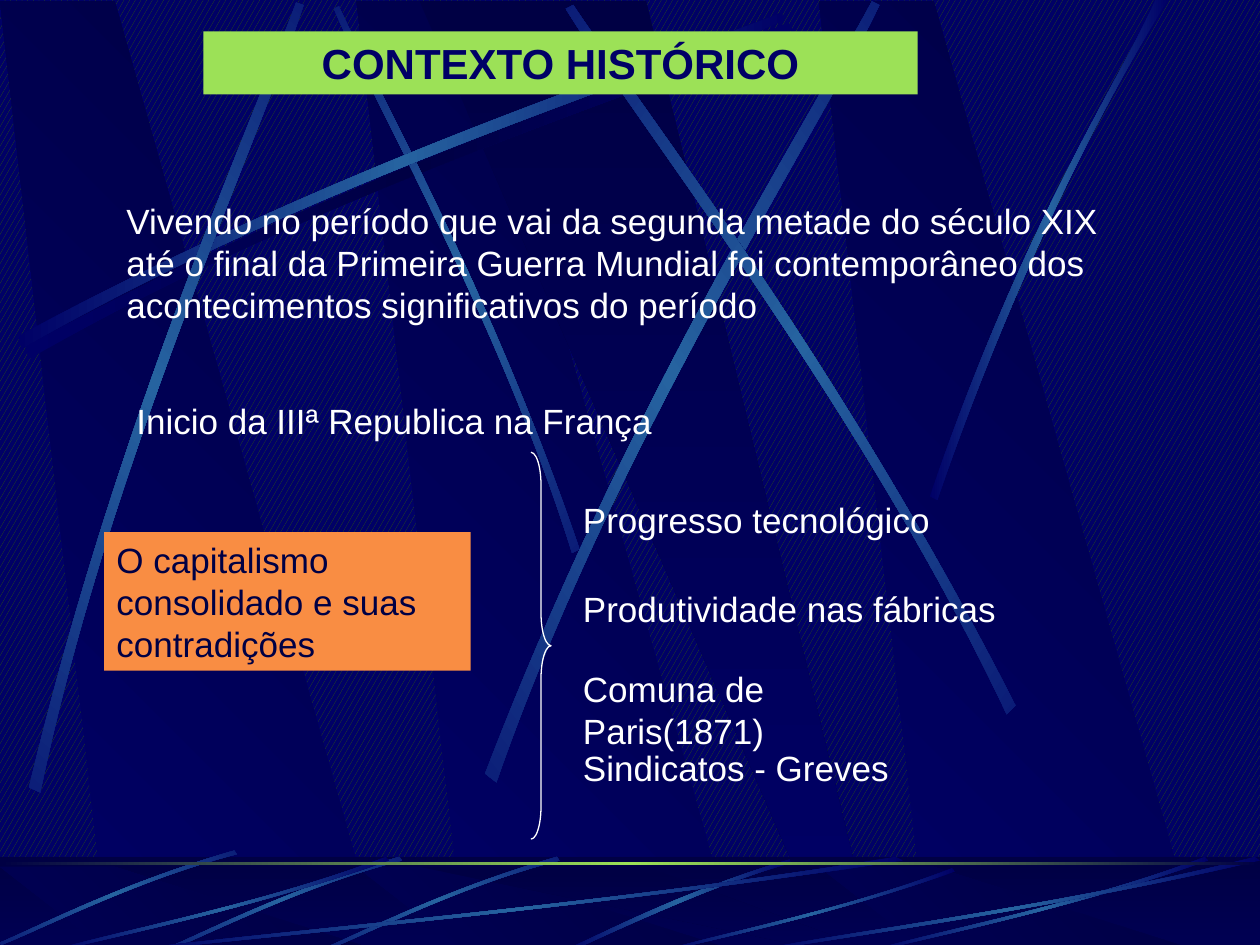
import math

from lxml import etree
from pptx import Presentation
from pptx import util as u
from pptx.dml import color
from pptx.enum import dml, shapes, text
from pptx.oxml import ns

NAVY, DARK, BLUE = "000066", "000044", "2663A0"
LIME, CORAL, WHITE = "9CE157", "F98D43", "FFFFFF"
GLOW = (NAVY, BLUE, NAVY)


def rgb(code):
    return color.RGBColor.from_string(code)


def shift(pts, dx, dy):
    return [(x + dx, y + dy) for x, y in pts]


def fit(pts, left, top, wide, high):
    return [(left + x * wide, top + y * high) for x, y in pts]


def turn(pts, angle):
    c, s = math.cos(math.radians(angle)), math.sin(math.radians(angle))
    return [(x * c - y * s, x * s + y * c) for x, y in pts]


def level(pts, angle):
    flat = turn(pts, -angle)
    mid = [(min(side) + max(side)) / 2 for side in zip(*flat)]
    spot = turn([mid], angle)[0]
    return shift(flat, spot[0] - mid[0], spot[1] - mid[1])


class Deck:
    cell = u.Inches(0.1)
    font = "Arial"
    size = 20

    def __init__(self, cols, rows):
        self.file = Presentation()
        self.file.slide_width = self.grid(cols)
        self.file.slide_height = self.grid(rows)
        self.page = self.file.slides.add_slide(self.file.slide_layouts[6])
        self.all = self.page.shapes

    def grid(self, n):
        return u.Emu(round(n * self.cell))

    def back(self, fore, base):
        fill = self.page.background.fill
        fill.patterned()
        fill.pattern = dml.MSO_PATTERN.LARGE_CONFETTI
        fill.fore_color.rgb = rgb(fore)
        fill.back_color.rgb = rgb(base)

    def plain(self, item):
        item.shadow.inherit = False
        item.line.fill.background()
        return item

    def blend(self, item, tones, angle):
        item.fill.gradient()
        grad = item._element.spPr.find(ns.qn("a:gradFill"))
        for kid in list(grad):
            grad.remove(kid)
        grad.set("rotWithShape", "1")
        stops = etree.SubElement(grad, ns.qn("a:gsLst"))
        for i, tone in enumerate(tones):
            spot = str(100000 * i // (len(tones) - 1))
            stop = etree.SubElement(stops, ns.qn("a:gs"), pos=spot)
            etree.SubElement(stop, ns.qn("a:srgbClr"), val=tone)
        etree.SubElement(grad, ns.qn("a:lin"), ang=str(angle * 60000), scaled="0")

    def shape(self, kind, *at):
        return self.plain(self.all.add_shape(kind, *map(self.grid, at)))

    def rect(self, *at):
        return self.shape(shapes.MSO_SHAPE.RECTANGLE, *at)

    def bar(self, at, tones, angle):
        self.blend(self.rect(*at), tones, angle)

    def veil(self, at, tone, alpha):
        item = self.rect(*at)
        item.fill.solid()
        item.fill.fore_color.rgb = rgb(tone)
        node = item._element.spPr.find(".//" + ns.qn("a:srgbClr"))
        etree.SubElement(node, ns.qn("a:alpha"), val=str(alpha * 1000))

    def poly(self, pts, tones, angle):
        spots = [(self.grid(x), self.grid(y)) for x, y in pts]
        pen = self.all.build_freeform(*spots[0])
        pen.add_line_segments(spots[1:], close=True)
        item = self.plain(pen.convert_to_shape())
        self.blend(item, tones, angle)
        return item

    def ray(self, pts, angle=0, tones=GLOW):
        item = self.poly(level(pts, angle), tones, 0)
        item.rotation = angle
        track = item._element.spPr.find(".//" + ns.qn("a:path"))
        steps = track.findall(ns.qn("a:lnTo"))
        for trio in (steps[:3], steps[4:]):
            bend = etree.Element(ns.qn("a:cubicBezTo"))
            trio[0].addprevious(bend)
            for step in trio:
                bend.append(step[0])
                track.remove(step)

    def panes(self, top, low):
        for x in (28.3, 0, 65):
            pts = [(x + 8.6, low), (x + 30.2, low), (x + 9.1, top), (x, top)]
            self.poly(pts, (NAVY, DARK), 315)
        pts = [(33.3, top), (65.8, low), (69.4, low), (51.3, top)]
        self.poly(pts, (DARK, NAVY), 90)

    def brace(self, at, tone, ratios):
        item = self.shape(shapes.MSO_SHAPE.RIGHT_BRACE, *at)
        item.fill.background()
        item.line.color.rgb = rgb(tone)
        item.line.width = u.Pt(0.75)
        for i, ratio in enumerate(ratios):
            item.adjustments[i] = ratio

    def words(self, at, line, tone=WHITE, fill=None, size=None, title=False):
        if fill:
            item = self.rect(*at)
            item.fill.solid()
            item.fill.fore_color.rgb = rgb(fill)
        else:
            item = self.all.add_textbox(*map(self.grid, at))
        frame = item.text_frame
        frame.word_wrap = True
        frame.auto_size = text.MSO_AUTO_SIZE.SHAPE_TO_FIT_TEXT
        frame.vertical_anchor = text.MSO_ANCHOR.TOP
        para = frame.paragraphs[0]
        para.text = line
        para.alignment = text.PP_ALIGN.CENTER if title else text.PP_ALIGN.LEFT
        para.font.name = self.font
        para.font.size = u.Pt(size or self.size)
        para.font.bold = title
        para.font.color.rgb = rgb(tone)


SWEEP = [(1.4, 26.7), (27.8, 12.5), (51.8, 5.1), (62, 1),
         (62.3, 1.6), (52.2, 6.1), (24.8, 14.3), (1.7, 27.7)]
BEAMS = [
    (311.7, [(2.3, 62.5), (9.3, 33.4), (19.7, 10.5), (23.5, 0.2),
             (24.1, 0.4), (20.7, 10.9), (8.6, 36.8), (3.2, 62.9)]),
    (321.6, [(38.5, 61.4), (49.8, 32), (63.8, 10.2), (69.2, 0.1),
             (69.8, 0.4), (64.9, 10.8), (48.6, 35.5), (39.4, 62.1)]),
    (34.7, [(80.6, 56), (67, 29.3), (51.6, 9.5), (45.5, 0.4),
            (44.9, 0.7), (50.7, 10.1), (68.5, 32.5), (79.9, 56.7)]),
    (0, [(73.8, 39.4), (81.4, 17.3), (88.8, 6.6), (91.7, 0),
         (92.7, 0), (83.6, 14.5), (76.9, 32.2), (74.4, 39.7)]),
]
SLANT = [(46, 43.6), (39.1, 23.4), (30.2, 7.7), (26.9, 0.5),
         (26.5, 0.7), (29.5, 7.9), (39.8, 25.8), (45.4, 43.9)]
ARC = [(62.7, 68.2), (53.7, 70.9), (47.7, 74.2), (44.8, 75.4),
       (45.3, 75.5), (49, 73.8), (57.1, 70), (62.8, 68.5)]
BLADE = [(44.2, 68), (35.5, 70.5), (28.7, 74), (25.6, 75.3),
         (25.7, 75.5), (28.8, 74.3), (36.5, 70.3), (44.4, 68.3)]
STREAK = [(1, 0.04), (0.57, 0.57), (0.17, 0.85), (0.01, 1),
          (0, 0.99), (0.16, 0.81), (0.62, 0.51), (0.99, 0)]
FLOOR = (0, 68, 100, 7.5)


def main():
    deck = Deck(100, 75)
    deck.back("2D5513", NAVY)
    deck.panes(0.1, 75.2)
    deck.ray(shift(SWEEP, 0.6, 0.8), tones=(NAVY, DARK, NAVY))
    deck.ray(SLANT, 45)
    deck.ray(SWEEP)
    for angle, pts in BEAMS:
        deck.ray(pts, angle)

    deck.bar(FLOOR, (DARK, NAVY), 90)
    deck.panes(68.8, 75.5)
    deck.veil(FLOOR, DARK, 50)
    deck.ray(ARC)
    for dx, dy in ((0, 0), (-12.5, 0), (-25.6, -0.5)):
        deck.ray(shift(BLADE, dx, dy), 315)
    for left, top, wide in ((10, 68, 61.7), (4.2, 68, 26.7), (52.7, 68.9, 23.1),
                            (69.2, 68, 26.7), (60, 68, 40)):
        deck.ray(fit(STREAK, left, top, wide, 75.5 - top))
    deck.bar((0, 68.4, 100, 0.23), (DARK, LIME, DARK), 0)

    deck.words((16.14, 2.5, 56.7, 5), "CONTEXTO HISTÓRICO", NAVY, LIME, 24, True)
    deck.words((9.04, 15.34, 79.5, 11),
               "Vivendo no período que vai da segunda metade do século XIX até o final da "
               "Primeira Guerra Mundial foi contemporâneo dos acontecimentos "
               "significativos do período")
    deck.words((9.84, 31.2, 63.8, 4.3), "Inicio da IIIª Republica na França")
    deck.words((8.26, 42.24, 29.1, 11),
               "O capitalismo consolidado e suas contradições", DARK, CORAL)
    for top, wide, line in ((39.1, 36.2, "Progresso tecnológico"),
                            (46.16, 42.5, "Produtividade nas fábricas"),
                            (52.5, 31.5, "Comuna de Paris(1871)"),
                            (58.76, 36.2, "Sindicatos - Greves")):
        deck.words((45.28, top, wide, 4.3), line)
    deck.brace((42.14, 35.9, 1.6, 30.7), WHITE, (1.62, 0.5))
    deck.file.save("out.pptx")


if __name__ == "__main__":
    main()
